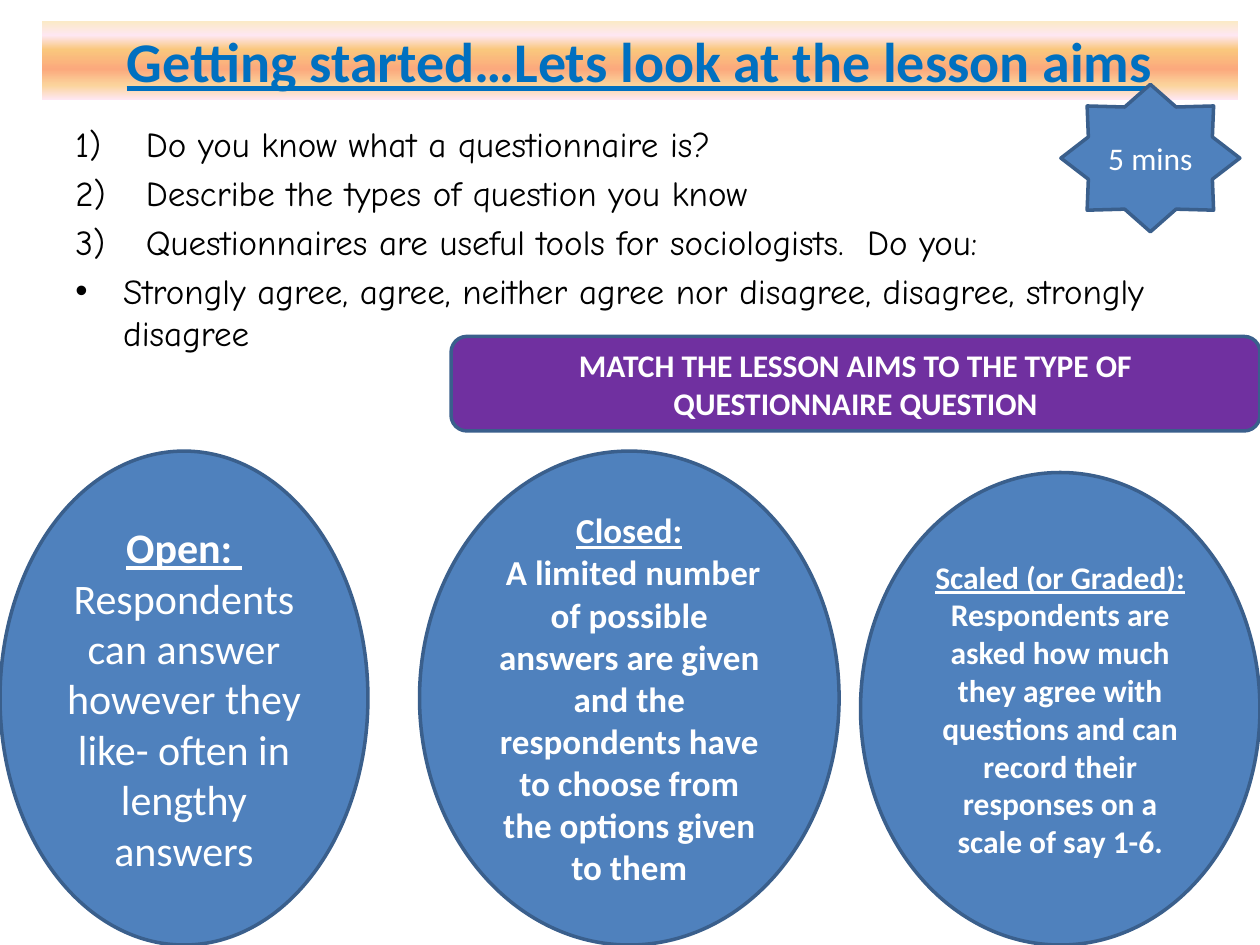
from dataclasses import dataclass

from lxml import etree
from pptx import Presentation
from pptx import util as u
from pptx.dml.color import RGBColor
from pptx.enum import shapes, text
from pptx.oxml.ns import qn

Kind = shapes.MSO_SHAPE


@dataclass(frozen=True)
class Theme:
    font: str = "Calibri"
    body_font: str = "Comic Neue"
    blue: str = "4F81BD"
    outline: str = "3A5F8C"
    purple: str = "7030A0"
    title: str = "0070C0"
    white: str = "FFFFFF"
    black: str = "000000"
    title_size: int = 32
    large: int = 24
    medium: int = 20
    small: int = 18
    line_width: int = 2
    # Title gradient, top to bottom: (percent, colour)
    gradient: tuple = ((0, "FBEAC7"), (18, "FEE7F2"), (36, "FAC77D"),
                       (61, "FBA97D"), (82, "FBD49C"), (100, "FEE7F2"))


THEME = Theme()


@dataclass(frozen=True)
class Line:
    text: str
    bold: bool = False
    underline: bool = False


@dataclass(frozen=True)
class Box:
    kind: Kind
    at: tuple[float, float, float, float]
    size: int
    lines: tuple[Line, ...]
    fill: str = THEME.blue
    color: str = THEME.white


@dataclass(frozen=True)
class Item:
    text: str
    numbered: bool = True


TITLE = Box(Kind.RECTANGLE, (0.33, 0.17, 9.5, 0.62), THEME.title_size,
            (Line("Getting started…Lets look at the lesson aims", True, True),),
            color=THEME.title)

ITEMS = (
    Item("Do you know what a questionnaire is?"),
    Item("Describe the types of question you know"),
    Item("Questionnaires are useful tools for sociologists.  Do you:"),
    Item("Strongly agree, agree, neither agree nor disagree, disagree, "
         "strongly disagree", numbered=False),
)

BOXES = (
    Box(Kind.OVAL, (0, 3.58, 2.92, 3.92), THEME.large, (
        Line("Open: ", True, True),
        Line("Respondents can answer however they like- often in lengthy answers"))),
    Box(Kind.OVAL, (3.33, 3.58, 3.33, 3.92), THEME.medium, (
        Line("Closed:", True, True),
        Line(" A limited number of possible answers are given and the respondents "
             "have to choose from the options given to them", True))),
    Box(Kind.OVAL, (6.83, 3.75, 3.17, 3.75), THEME.small, (
        Line("Scaled (or Graded):", True, True),
        Line("Respondents are asked how much they agree with questions and can "
             "record their responses on a scale of say 1-6.", True))),
    Box(Kind.ROUNDED_RECTANGLE, (3.58, 2.67, 6.42, 0.75), THEME.small, (
        Line("MATCH THE LESSON AIMS TO THE TYPE OF QUESTIONNAIRE QUESTION", True),),
        fill=THEME.purple),
    Box(Kind.STAR_8_POINT, (8.42, 0.67, 1.42, 1.17), THEME.small,
        (Line("5 mins"),)),
)


def rgb(value: str) -> RGBColor:
    return RGBColor.from_string(value)


def format_run(r, font: str, size: int, color: str) -> None:
    r.font.name = font
    r.font.size = u.Pt(size)
    r.font.color.rgb = rgb(color)


def add_box(slide, box: Box):
    sp = slide.shapes.add_shape(box.kind, *map(u.Inches, box.at))
    sp.shadow.inherit = False
    sp.fill.solid()
    sp.fill.fore_color.rgb = rgb(box.fill)
    sp.line.color.rgb = rgb(THEME.outline)
    sp.line.width = u.Pt(THEME.line_width)
    tf = sp.text_frame
    tf.word_wrap = True
    tf.vertical_anchor = text.MSO_ANCHOR.MIDDLE
    tf.text = "\n".join(line.text for line in box.lines)
    for p, line in zip(tf.paragraphs, box.lines):
        p.alignment = text.PP_ALIGN.CENTER
        r = p.runs[0]
        format_run(r, THEME.font, box.size, box.color)
        r.font.bold = line.bold
        r.font.underline = line.underline
    return sp


def set_gradient(sp, stops: tuple) -> None:
    sp.fill.gradient()
    sp.fill.gradient_angle = 270  # counter-clockwise, so top to bottom
    gs_list = sp.element.spPr.find(".//" + qn("a:gsLst"))
    for gs in list(gs_list):
        gs_list.remove(gs)
    for percent, color in stops:
        gs = etree.SubElement(gs_list, qn("a:gs"), pos=str(percent * 1000))
        etree.SubElement(gs, qn("a:srgbClr"), val=color)


def set_bullet(p, numbered: bool) -> None:
    indent = u.Inches(0.56 if numbered else 0.38)
    pPr = p._p.get_or_add_pPr()
    pPr.set("marL", str(indent))
    pPr.set("indent", str(-indent))
    if numbered:
        etree.SubElement(pPr, qn("a:buAutoNum"), type="arabicParenR")
    else:
        etree.SubElement(pPr, qn("a:buFont"), typeface="Arial")
        etree.SubElement(pPr, qn("a:buChar"), char="•")


def add_list(slide, at: tuple, items: tuple[Item, ...]) -> None:
    tf = slide.shapes.add_textbox(*map(u.Inches, at)).text_frame
    tf.word_wrap = True
    tf.text = "\n".join(item.text for item in items)
    for p, item in zip(tf.paragraphs, items):
        p.space_before = u.Pt(THEME.medium * 0.2)
        set_bullet(p, item.numbered)
        format_run(p.runs[0], THEME.body_font, THEME.medium, THEME.black)


def main() -> None:
    prs = Presentation()
    prs.slide_width, prs.slide_height = u.Inches(10), u.Inches(7.5)
    slide = prs.slides.add_slide(prs.slide_layouts[6])

    # Title band
    title = add_box(slide, TITLE)
    title.line.fill.background()
    set_gradient(title, THEME.gradient)

    # Starter questions
    add_list(slide, (0.5, 0.92, 9, 5.28), ITEMS)

    # Question types, instruction and timer
    for box in BOXES:
        add_box(slide, box)

    prs.save("out.pptx")


if __name__ == "__main__":
    main()
